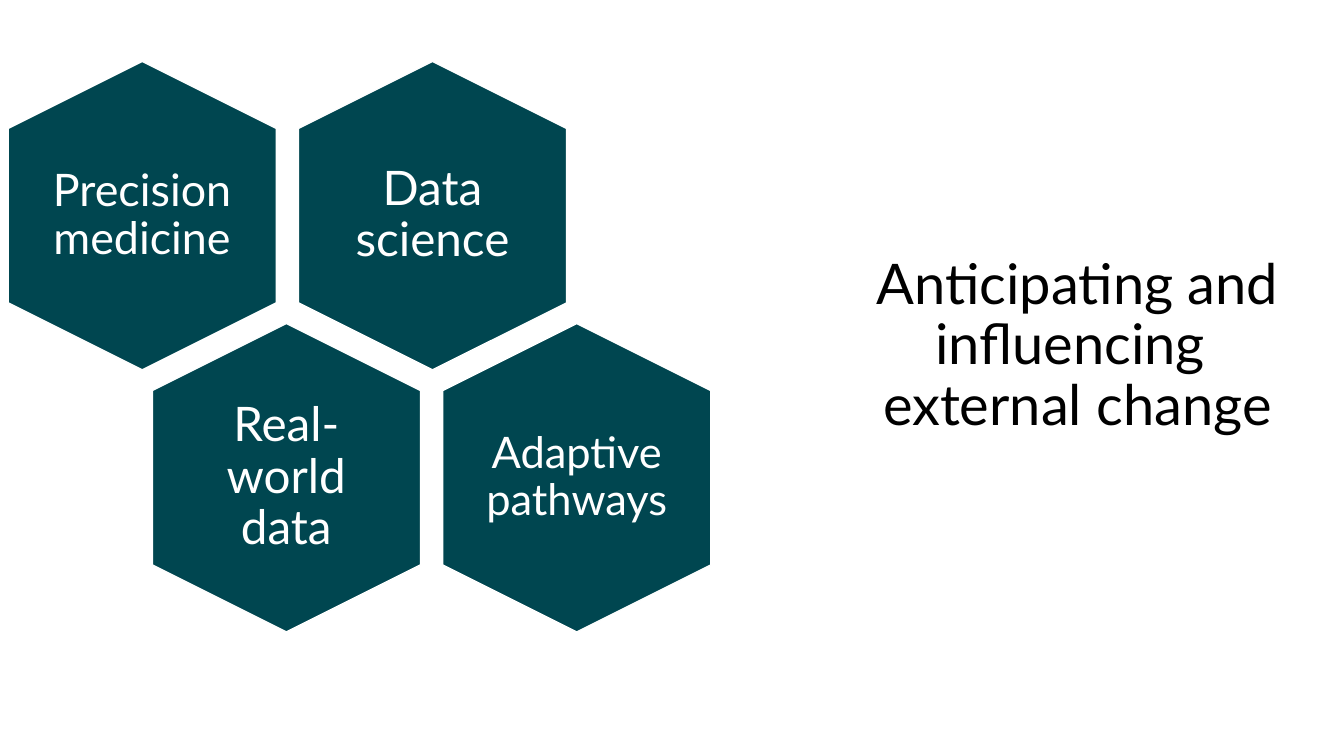
from dataclasses import dataclass

from pptx import Presentation
from pptx.dml.color import RGBColor
from pptx.enum.shapes import MSO_SHAPE
from pptx.enum.text import MSO_ANCHOR, PP_ALIGN
from pptx.util import Inches, Pt


@dataclass(frozen=True)
class Theme:
    font: str = "Lato"
    teal: RGBColor = RGBColor(0x00, 0x46, 0x50)
    white: RGBColor = RGBColor(0xFF, 0xFF, 0xFF)
    black: RGBColor = RGBColor(0x00, 0x00, 0x00)
    title_size: int = 40
    large_label: int = 34
    medium_label: int = 32
    small_label: int = 31


THEME = Theme()

HEXAGON_LENGTH, HEXAGON_BREADTH = 3.06, 2.66
LABEL_WIDTH, LABEL_HEIGHT = 1.83, 2.11
COLUMN_STEP, ROW_STEP, ROW_SHIFT = 2.88, 2.6, 1.43
FIRST_CENTER_X, FIRST_CENTER_Y = 1.41, 2.14

# text, column, row, type size, inset
TOPICS = [
    ("Data science", 1, 0, THEME.large_label, 0.14),
    ("Precision medicine", 0, 0, THEME.medium_label, 0),
    ("Real-world data", 0, 1, THEME.large_label, 0.14),
    ("Adaptive pathways", 1, 1, THEME.small_label, 0),
]


def centered_frame(center_x, center_y, width, height):
    """Return left, top, width and height of a frame around a centre."""
    return (Inches(center_x - width / 2), Inches(center_y - height / 2),
            Inches(width), Inches(height))


def add_text(shapes, frame, lines, size, color, inset_x, inset_y):
    """Add a centred text box; lines are parted by line breaks."""
    box = shapes.add_textbox(*frame)
    text = box.text_frame
    text.word_wrap = True
    text.vertical_anchor = MSO_ANCHOR.MIDDLE
    text.margin_left = text.margin_right = Inches(inset_x)
    text.margin_top = text.margin_bottom = Inches(inset_y)
    para = text.paragraphs[0]
    para.alignment = PP_ALIGN.CENTER
    para.line_spacing = 0.9
    for index, line in enumerate(lines):
        if index:
            para.add_line_break()
        span = para.add_run()
        span.text = line
        span.font.name = THEME.font
        span.font.size = Pt(size)
        span.font.color.rgb = color


def add_hexagon(shapes, center_x, center_y):
    hexagon = shapes.add_shape(
        MSO_SHAPE.HEXAGON,
        *centered_frame(center_x, center_y, HEXAGON_LENGTH, HEXAGON_BREADTH))
    hexagon.adjustments[0] = 0.25
    hexagon.rotation = 90
    hexagon.shadow.inherit = False
    hexagon.fill.solid()
    hexagon.fill.fore_color.rgb = THEME.teal
    hexagon.line.color.rgb = THEME.white
    hexagon.line.width = Pt(1)


def add_topic(shapes, label, column, row, size, inset):
    center_x = FIRST_CENTER_X + column * COLUMN_STEP + row * ROW_SHIFT
    center_y = FIRST_CENTER_Y + row * ROW_STEP
    add_hexagon(shapes, center_x, center_y)
    frame = centered_frame(center_x, center_y, LABEL_WIDTH, LABEL_HEIGHT)
    add_text(shapes, frame, [label], size, THEME.white, inset, inset)


def main():
    deck = Presentation()
    deck.slide_width, deck.slide_height = Inches(13.33), Inches(7.5)
    page = deck.slides.add_slide(deck.slide_layouts[6])
    honeycomb = page.shapes.add_group_shape()
    for topic in TOPICS:
        add_topic(honeycomb.shapes, *topic)
    title_frame = Inches(7.83), Inches(2.56), Inches(5.71), Inches(1.76)
    add_text(page.shapes, title_frame,
             ["Anticipating and influencing ", "external change"],
             THEME.title_size, THEME.black, 0.1, 0.05)
    deck.save("out.pptx")


if __name__ == "__main__":
    main()
